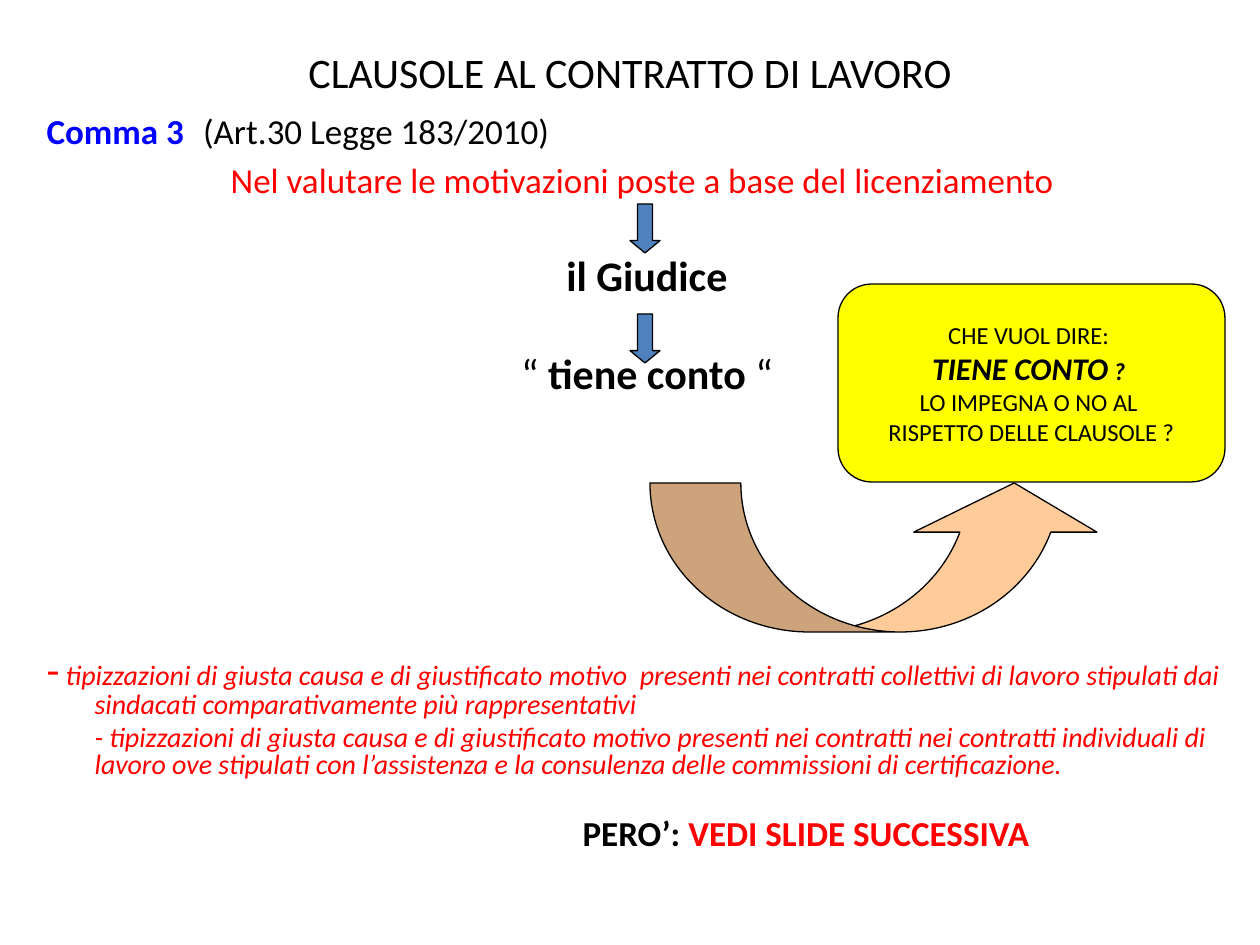
from collections import namedtuple

from lxml import etree
from pptx import Presentation
from pptx.dml.color import RGBColor
from pptx.enum.shapes import MSO_SHAPE
from pptx.enum.text import MSO_ANCHOR, MSO_AUTO_SIZE, PP_ALIGN
from pptx.oxml.ns import qn
from pptx.util import Pt

PX = 914400 / 126
FONT = "Calibri"
BLACK = RGBColor(0x00, 0x00, 0x00)
BLUE = RGBColor(0x00, 0x00, 0xFF)
RED = RGBColor(0xFF, 0x00, 0x00)
STEEL = RGBColor(0x4F, 0x81, 0xBD)
YELLOW = RGBColor(0xFF, 0xFF, 0x00)
PEACH = RGBColor(0xFF, 0xCC, 0x99)

LEFT, CENTER = PP_ALIGN.LEFT, PP_ALIGN.CENTER
MIDDLE, TOP = MSO_ANCHOR.MIDDLE, MSO_ANCHOR.TOP
NO_FIT = MSO_AUTO_SIZE.NONE
DOWN_ARROW = MSO_SHAPE.DOWN_ARROW
ROUNDED = MSO_SHAPE.ROUNDED_RECTANGLE
CURVED_UP = MSO_SHAPE.CURVED_UP_ARROW

Box = namedtuple("Box", "left top width height")


def emu(px):
    """Convert px to whole EMU."""
    return round(px * PX)


def place(shape, box):
    """Move and size a shape to the box."""
    for name, value in box._asdict().items():
        setattr(shape, name, emu(value))


def add_span(para, text, size, color=BLACK, **styles):
    """Append one formatted run to the paragraph."""
    span = para.add_run()
    span.text = text
    span.font.color.rgb = color
    formats = {"name": FONT, "size": Pt(size), "bold": False, "italic": False}
    for name, value in {**formats, **styles}.items():
        setattr(span.font, name, value)


def fill_frame(frame, paragraphs):
    """Write (format, spans) paragraphs into the frame and return them."""
    for index, (formats, spans) in enumerate(paragraphs):
        para = frame.add_paragraph() if index else frame.paragraphs[0]
        for name, value in formats.items():
            setattr(para, name, value)
        for text, size, color, styles in spans:
            add_span(para, text, size, color, **styles)
    return frame.paragraphs


def set_indent(para, margin, first):
    """Set a bullet-free left margin and first-line indent in px."""
    properties = para._p.get_or_add_pPr()
    properties.set("marL", str(emu(margin)))
    properties.set("indent", str(emu(first)))
    etree.SubElement(properties, qn("a:buNone"))


def add_figure(page, kind, box, color, adjustments):
    """Add a filled preset shape with a thin black outline."""
    figure = page.shapes.add_shape(kind, *(emu(value) for value in box))
    figure.shadow.inherit = False
    figure.fill.solid()
    figure.fill.fore_color.rgb = color
    figure.line.color.rgb = BLACK
    figure.line.width = Pt(0.75)
    for index, value in enumerate(adjustments):
        figure.adjustments[index] = value
    return figure


def build_title(page, box):
    """Fill the title placeholder."""
    title = page.shapes.title
    place(title, box)
    title.text_frame.auto_size = NO_FIT
    title.text_frame.vertical_anchor = MIDDLE
    spans = [("CLAUSOLE AL CONTRATTO DI LAVORO", 24, BLACK, {})]
    fill_frame(title.text_frame, [({"alignment": CENTER}, spans)])


def build_body(page, box):
    """Fill the body placeholder with the clause text."""
    bold, italic = {"bold": True}, {"italic": True}
    hanging, flush, deep = (48, -48), (48, 0), (536, 0)
    rows = [
        (LEFT, 4.8, hanging, [
            ("Comma 3", 20, BLUE, bold),
            ("  ", 24, BLACK, {}),
            ("(Art.30 Legge 183/2010)", 20, BLACK, {}),
            (" ", 24, BLACK, {})]),
        (CENTER, 4.8, hanging, [
            ("Nel valutare le motivazioni poste a base del licenziamento",
             20, RED, {}),
            (" ", 24, RED, {})]),
        (CENTER, 33, hanging, [("il Giudice", 24, BLACK, bold)]),
        (CENTER, 33, hanging, [
            ("“ ", 24, BLACK, {}),
            ("tiene conto", 24, BLACK, bold),
            (" “", 24, BLACK, {})]),
        (LEFT, 146, hanging, [
            ("-", 24, RED, {}),
            (" tipizzazioni di giusta causa e di giustificato motivo  presenti "
             "nei contratti collettivi di lavoro stipulati dai sindacati "
             "comparativamente più rappresentativi", 16, RED, italic)]),
        (LEFT, 3.2, flush, [
            ("- tipizzazioni di giusta causa e di giustificato motivo presenti "
             "nei contratti nei contratti individuali di lavoro ove stipulati "
             "con l’assistenza e la consulenza delle commissioni di "
             "certificazione.", 16, RED, italic)]),
        (LEFT, 23, deep, [
            ("PERO’:", 20, BLACK, bold),
            (" VEDI SLIDE SUCCESSIVA", 20, RED, bold)]),
    ]
    body = page.placeholders[1]
    place(body, box)
    frame = body.text_frame
    frame.auto_size = NO_FIT
    frame.vertical_anchor = TOP
    paragraphs = fill_frame(frame, [
        ({"alignment": align, "line_spacing": 0.8, "space_before": Pt(before)},
         spans) for align, before, _, spans in rows])
    for para, (_, _, indent, _) in zip(paragraphs, rows):
        set_indent(para, *indent)


def build_steps(page, box):
    """Add one down arrow at the top and one at the bottom of the box."""
    height = 49
    for top in (box.top, box.top + box.height - height):
        arrow = Box(box.left, top, box.width, height)
        add_figure(page, DOWN_ARROW, arrow, STEEL, [0.5, 0.41])


def build_question(page, box):
    """Add the yellow callout and the curved arrow rising to it."""
    callout = Box(box.left + 188, box.top, box.width - 188, 198)
    figure = add_figure(page, ROUNDED, callout, YELLOW, [0.17])
    frame = figure.text_frame
    frame.word_wrap = False
    frame.vertical_anchor = MIDDLE
    strong = {"bold": True, "italic": True}
    lines = [
        [("CHE VUOL DIRE: ", 14, BLACK, {})],
        [("TIENE CONTO", 18, BLACK, strong), (" ? ", 14, BLACK, strong)],
        [("LO IMPEGNA O NO AL ", 14, BLACK, {})],
        [("RISPETTO DELLE CLAUSOLE ?", 14, BLACK, {})],
    ]
    fill_frame(frame, [({"alignment": CENTER}, spans) for spans in lines])
    curve = Box(box.left, box.top + 199, 456, box.height - 199)
    add_figure(page, CURVED_UP, curve, PEACH, [0.61, 1.23, 0.33])


def main():
    """Build the slide and save the deck."""
    deck = Presentation()
    deck.slide_width, deck.slide_height = emu(1260), emu(945)
    page = deck.slides.add_slide(deck.slide_layouts[1])
    build_title(page, Box(63, 38, 1134, 68))
    build_body(page, Box(34, 106, 1226, 803))
    build_steps(page, Box(630, 204, 30, 159))
    build_question(page, Box(650, 284, 575, 348))
    deck.save("out.pptx")


if __name__ == "__main__":
    main()
